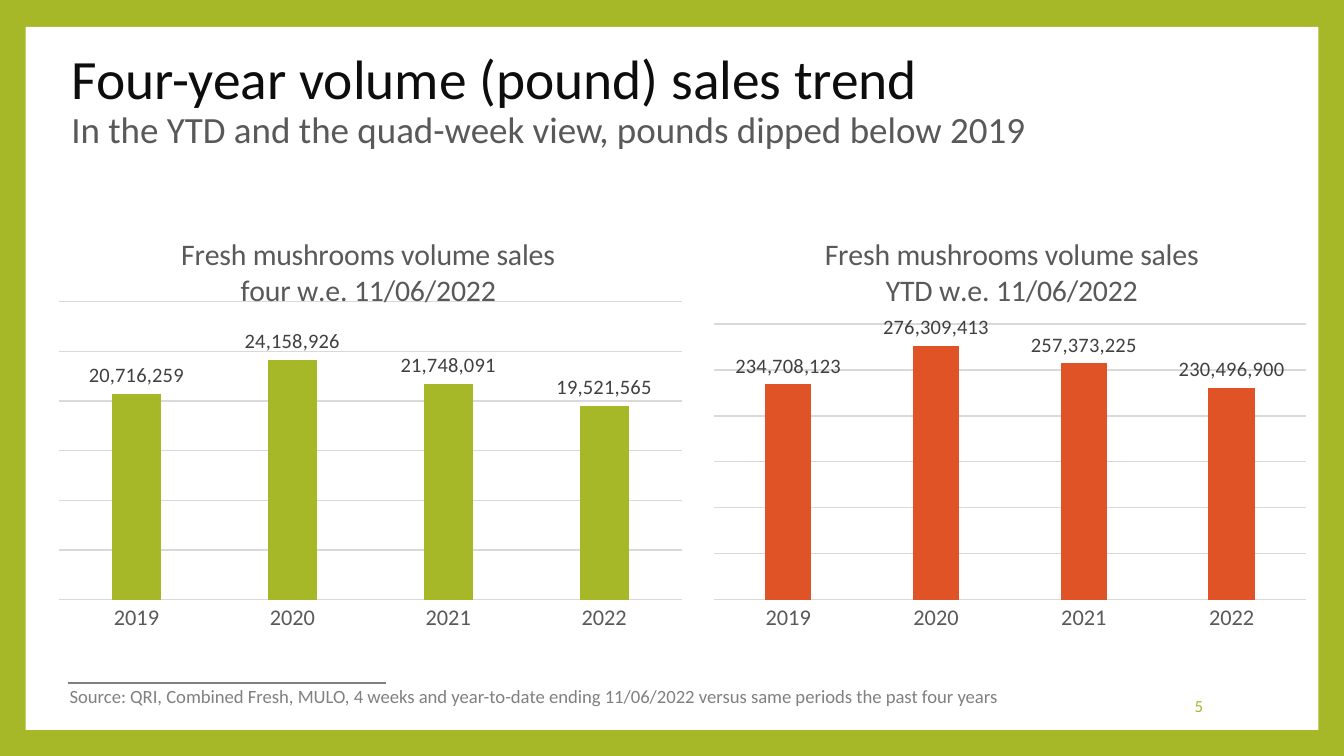
from dataclasses import dataclass

from lxml import etree
from pptx import Presentation
from pptx.chart.data import CategoryChartData
from pptx.dml.color import RGBColor
from pptx.enum.chart import XL_CHART_TYPE as ChartType, XL_LABEL_POSITION as LabelPos
from pptx.enum.chart import XL_TICK_MARK as Tick
from pptx.enum.shapes import MSO_CONNECTOR as Connector, MSO_SHAPE as Shape
from pptx.enum.text import MSO_ANCHOR as Anchor, MSO_AUTO_SIZE as AutoSize, PP_ALIGN as Align
from pptx.oxml.ns import qn
from pptx.util import Pt

FONT = "Calibri"
GREEN, ORANGE, WHITE = "A6B727", "DF5327", "FFFFFF"
BLACK, DARK, MID, GREY, PALE = "0D0D0D", "404040", "595959", "808080", "D9D9D9"
YEARS = ("2019", "2020", "2021", "2022")


@dataclass
class SalesChart:
    title: str
    left: float
    width: float
    color: str
    values: tuple[int, ...]
    step: int  # gridline interval; the axis holds six
    title_x: float
    plot_y: float
    plot_h: float


CHARTS = [
    SalesChart("Fresh mushrooms volume sales\nfour w.e. 11/06/2022", 31, 334.8, GREEN,
               (20716259, 24158926, 21748091, 19521565), 5_000_000, 0.19, 0.21, 0.67),
    SalesChart("Fresh mushrooms volume sales\nYTD w.e. 11/06/2022", 382.3, 317.5, ORANGE,
               (234708123, 276309413, 257373225, 230496900), 50_000_000, 0.18, 0.26, 0.62),
]


def rgb(color: str) -> RGBColor:
    return RGBColor.from_string(color)


def style_font(font, size: float, color: str) -> None:
    font.name, font.size, font.bold = FONT, Pt(size), False
    font.color.rgb = rgb(color)


def style_line(line, color: str, width: float) -> None:
    line.color.rgb = rgb(color)
    line.width = Pt(width)


def add_run(p, text: str, *, size: float, color: str) -> None:
    r = p.add_run()
    r.text = text
    style_font(r.font, size, color)


def add_text(slide, text: str, left: float, top: float, width: float, height: float, *,
             size: float, color: str, align=Align.LEFT, anchor=Anchor.TOP) -> None:
    tf = slide.shapes.add_textbox(Pt(left), Pt(top), Pt(width), Pt(height)).text_frame
    tf.word_wrap = True
    tf.vertical_anchor = anchor
    p = tf.paragraphs[0]
    p.alignment = align
    add_run(p, text, size=size, color=color)


def set_layout(parent, **values) -> None:
    """Place a chart title or plot area by fractions of the chart."""
    for old in parent.findall(qn("c:layout")):
        parent.remove(old)
    layout = etree.Element(qn("c:layout"))
    manual = etree.SubElement(layout, qn("c:manualLayout"))
    for tag, value in values.items():
        etree.SubElement(manual, qn(f"c:{tag}")).set("val", str(value))
    tx = parent.find(qn("c:tx"))
    parent.insert(0 if tx is None else 1, layout)


def add_sales_chart(slide, spec_: SalesChart) -> None:
    data = CategoryChartData(number_format="#,##0")
    data.categories = YEARS
    data.add_series("Series 1", spec_.values)
    chart = slide.shapes.add_chart(ChartType.COLUMN_CLUSTERED, Pt(spec_.left), Pt(111.6),
                                   Pt(spec_.width), Pt(238.3), data).chart
    style_font(chart.font, 10, "000000")
    chart.has_legend = False

    # Title
    tf = chart.chart_title.text_frame
    tf.text = spec_.title
    for p in tf.paragraphs:
        style_font(p.font, 16, MID)
        for r in p.runs:
            style_font(r.font, 16, MID)
    title = chart.chart_title
    title.include_in_layout = False
    set_layout(title._element, xMode="edge", yMode="edge", x=spec_.title_x, y=0.05)

    # Axes
    cat, val = chart.category_axis, chart.value_axis
    cat.major_tick_mark = cat.minor_tick_mark = Tick.NONE
    style_font(cat.tick_labels.font, 12, MID)
    style_line(cat.format.line, PALE, 0.75)
    val.visible = False
    val.minimum_scale, val.maximum_scale = 0, 6 * spec_.step
    val.major_unit = spec_.step
    style_line(val.major_gridlines.format.line, PALE, 0.75)

    # Columns and labels
    plot = chart.plots[0]
    plot.gap_width, plot.overlap, plot.vary_by_categories = 219, -27, False
    fill = plot.series[0].format.fill
    fill.solid()
    fill.fore_color.rgb = rgb(spec_.color)
    labels = plot.series[0].data_labels
    labels.show_value = True
    labels.position = LabelPos.OUTSIDE_END
    labels.number_format, labels.number_format_is_linked = "#,##0", False
    style_font(labels.font, 11, DARK)
    set_layout(chart._chartSpace.chart.plotArea, layoutTarget="inner", xMode="edge",
               yMode="edge", x=0, y=spec_.plot_y, w=1, h=spec_.plot_h)


def add_frame(slide) -> None:
    bg = slide.background.fill
    bg.solid()
    bg.fore_color.rgb = rgb(GREEN)
    sp = slide.shapes.add_shape(Shape.RECTANGLE, Pt(13.7), Pt(14.4), Pt(692.6), Pt(376.6))
    sp.shadow.inherit = False
    sp.fill.solid()
    sp.fill.fore_color.rgb = rgb(WHITE)
    sp.line.fill.background()
    # Rule above the source note
    rule = slide.shapes.add_connector(Connector.STRAIGHT, Pt(36.7), Pt(365.8), Pt(206.6), Pt(365.8))
    style_line(rule.line, GREY, 0.79)
    etree.SubElement(rule._element.spPr, qn("a:effectLst"))


def set_title(slide) -> None:
    sp = slide.shapes.title
    sp.left, sp.top, sp.width, sp.height = Pt(31), Pt(25.9), Pt(668.9), Pt(56.9)
    # Bring the title in front of the white panel
    slide.shapes._spTree.append(sp._element)
    tf = sp.text_frame
    tf.auto_size, tf.word_wrap, tf.vertical_anchor = AutoSize.NONE, True, Anchor.MIDDLE
    p = tf.paragraphs[0]
    p.alignment, p.line_spacing = Align.LEFT, 0.9
    add_run(p, "Four-year volume (pound) sales trend", size=29.7, color=BLACK)
    p.add_line_break()
    add_run(p, "In the YTD and the quad-week view, pounds dipped below 2019", size=19.8, color=MID)


def main() -> None:
    prs = Presentation()
    prs.slide_width, prs.slide_height = Pt(720), Pt(405)
    slide = prs.slides.add_slide(prs.slide_layouts[5])
    add_frame(slide)
    set_title(slide)
    # Page number and source note
    add_text(slide, "5", 550.8, 367.2, 100.8, 21.6, size=9, color=GREEN,
             align=Align.RIGHT, anchor=Anchor.MIDDLE)
    add_text(slide, "Source: QRI, Combined Fresh, MULO, 4 weeks and year-to-date ending 11/06/2022 "
             "versus same periods the past four years", 30.2, 363.6, 519.8, 19.4,
             size=10, color=GREY)
    for chart in CHARTS:
        add_sales_chart(slide, chart)
    prs.save("out.pptx")


if __name__ == "__main__":
    main()
